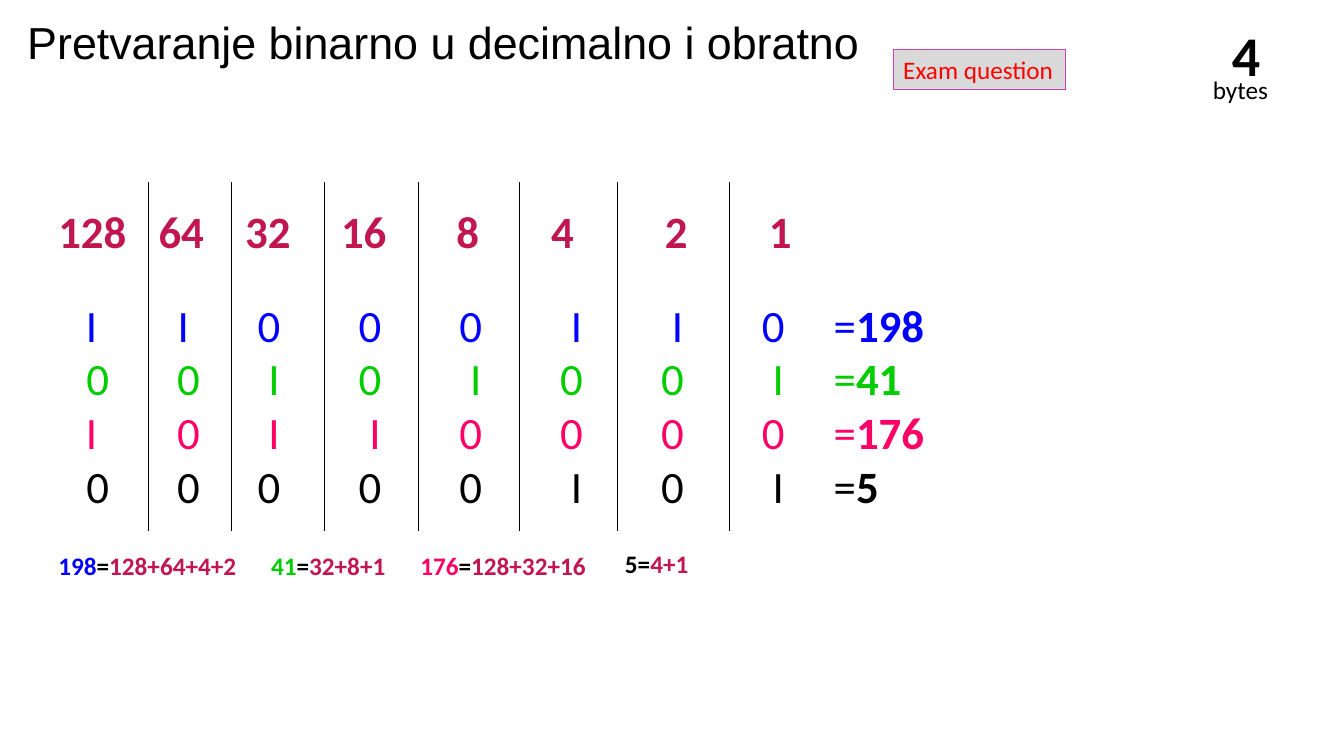
from lxml.etree import SubElement
from pptx import Presentation
from pptx.dml.color import RGBColor
from pptx.enum.shapes import MSO_CONNECTOR, MSO_SHAPE
from pptx.enum.text import MSO_ANCHOR, PP_ALIGN
from pptx.oxml.ns import qn
from pptx.util import Inches, Pt

BLACK, WINE = "000000", "C11650"
WEIGHTS = [128, 64, 32, 16, 8, 4, 2, 1]
ROWS = [("11000110", "0000FF"), ("00101001", "00CC00"),
        ("10110000", "FF0066"), ("00000101", BLACK)]


def color(code):
    return RGBColor.from_string(code)


class Board:
    """The slide being built, with its text style."""

    def __init__(self, deck):
        self.font = "Calibri"
        self.slide = deck.slides.add_slide(deck.slide_layouts[5])

    def title(self, text):
        shape = self.slide.shapes.title
        shape.left, shape.top = Inches(0.27), Inches(0.16)
        shape.width, shape.height = Inches(12.99), Inches(1.17)
        frame = shape.text_frame
        frame.margin_left = 0
        frame.vertical_anchor = MSO_ANCHOR.TOP
        frame.text = text
        para = frame.paragraphs[0]
        para.alignment = PP_ALIGN.LEFT
        para.line_spacing = 0.9
        para.font.name, para.font.size = "Arial", Pt(32)
        para.font.color.rgb = color(BLACK)

    def box(self, x, y, w, h, wrap=False):
        shape = self.slide.shapes.add_textbox(
            Inches(x), Inches(y), Inches(w), Inches(h))
        shape.text_frame.word_wrap = wrap
        return shape.text_frame

    def fill(self, para, size, parts, tabs=()):
        """Fill a paragraph with (text, colour, bold) parts and tab stops."""
        para.alignment = PP_ALIGN.LEFT
        if tabs:
            stops = SubElement(para._p.get_or_add_pPr(), qn("a:tabLst"))
            for pos, kind in tabs:
                SubElement(stops, qn("a:tab"), pos=str(Inches(pos)), algn=kind)
        para.font.name, para.font.size = self.font, Pt(size)
        for text, code, bold in parts:
            run = para.add_run()
            run.text = text
            run.font.bold = bold
            run.font.color.rgb = color(code)

    def label(self, x, y, w, h, size, *parts):
        self.fill(self.box(x, y, w, h).paragraphs[0], size, parts)

    def badge(self, x, y, w, h, text):
        shape = self.slide.shapes.add_shape(
            MSO_SHAPE.RECTANGLE, Inches(x), Inches(y), Inches(w), Inches(h))
        shape.shadow.inherit = False
        shape.fill.solid()
        shape.fill.fore_color.rgb = color("D9D9D9")
        shape.line.color.rgb = color("CF41AD")
        shape.line.width = Pt(0.75)
        shape.text_frame.word_wrap = False
        self.fill(shape.text_frame.paragraphs[0], 18,
                  [(text, "FF0000", False)])

    def rule(self, x, top, bottom):
        line = self.slide.shapes.add_connector(
            MSO_CONNECTOR.STRAIGHT, Inches(x), Inches(top),
            Inches(x), Inches(bottom))
        line.line.color.rgb = color(BLACK)
        line.line.width = Pt(0.5)
        SubElement(line._element.spPr, qn("a:effectLst"))


def main():
    deck = Presentation()
    deck.slide_width, deck.slide_height = Inches(13.33), Inches(7.5)
    board = Board(deck)
    board.title("Pretvaranje binarno u decimalno i obratno")

    # Tab stops are measured from the text edge of each box.
    zeros = [0.4, 1.3] + [2.1 + step for step in range(6)]
    ones = [0.34, 1.25] + [2.15 + step for step in range(6)]
    frame = board.box(0.47, 2.9, 9.15, 2.27, wrap=True)
    for index, (bits, code) in enumerate(ROWS):
        para = frame.add_paragraph() if index else frame.paragraphs[0]
        tabs = [((ones if bit == "1" else zeros)[col], "ctr")
                for col, bit in enumerate(bits)] + [(7.7, "l")]
        digits = "".join("\t" + bit for bit in bits.replace("1", "I"))
        board.fill(para, 32, [(digits + "\t=", code, False),
                              (str(int(bits, 2)), code, True)], tabs)

    heads = [1.22, 2.08, 3.03, 4.06, 5, 6.13, 7.16]
    frame = board.box(0.48, 1.97, 7.56, 0.64, wrap=True)
    board.fill(frame.paragraphs[0], 32,
               [("\t".join(map(str, WEIGHTS)), WINE, True)],
               [(pos, "ctr") for pos in heads])

    places = [(0.48, 5.41, 2.19), (2.59, 5.41, 1.48),
              (4.07, 5.41, 2.05), (6.1, 5.39, 0.92)]
    for (bits, code), (x, y, w) in zip(ROWS, places):
        terms = [str(n) for n, bit in zip(WEIGHTS, bits) if bit == "1"]
        board.label(x, y, w, 0.4, 18, (str(int(bits, 2)), code, True),
                    ("=", BLACK, True), ("+".join(terms), WINE, True))

    for x in (1.47, 2.29, 3.22, 4.15, 5.15, 6.12, 7.23):
        board.rule(x, 1.81, 5.27)

    board.label(12.12, 0.15, 0.51, 0.77, 40, ("4", BLACK, True))
    board.label(11.93, 0.69, 0.81, 0.4, 18, ("bytes", BLACK, False))
    board.badge(8.86, 0.49, 1.71, 0.4, "Exam question")
    deck.save("out.pptx")


if __name__ == "__main__":
    main()
